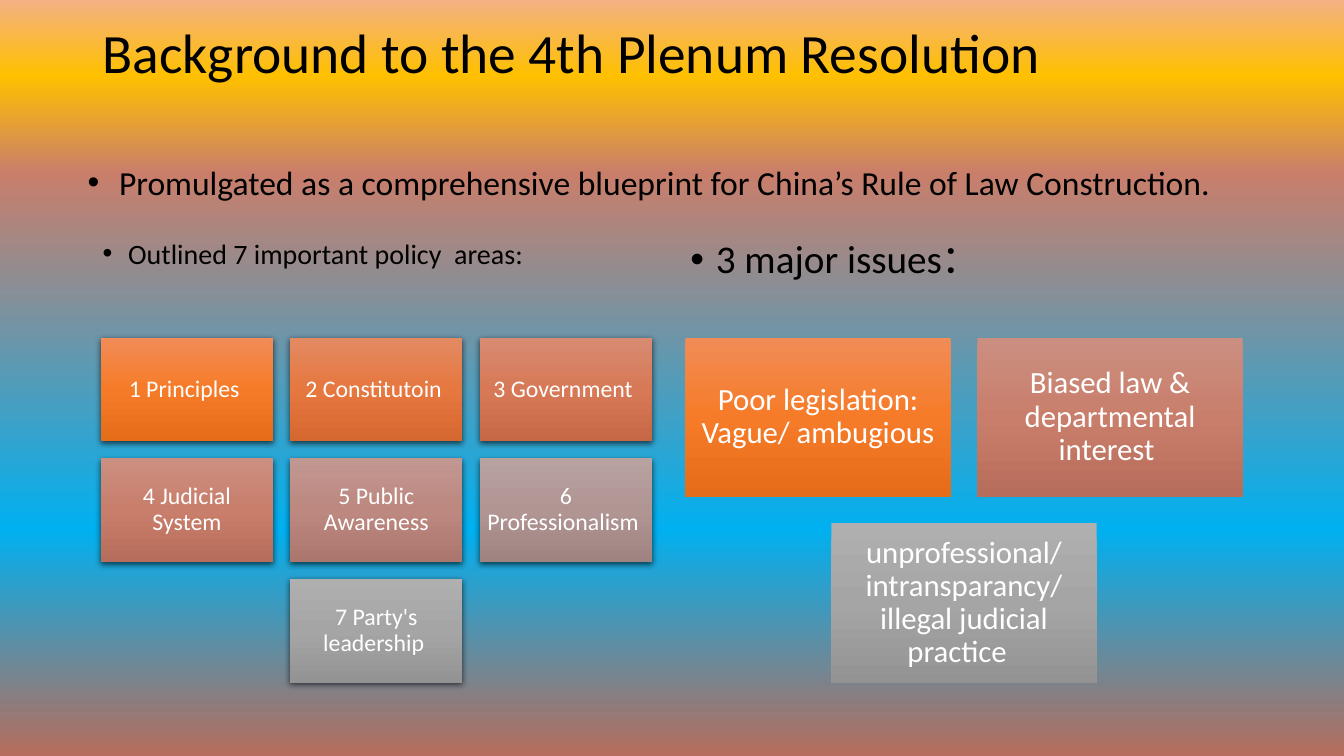
from dataclasses import dataclass

from lxml import etree
from pptx import Presentation
from pptx import util as u
from pptx.dml.color import RGBColor
from pptx.enum import shapes, text
from pptx.oxml import ns


@dataclass(frozen=True)
class Theme:
    font: str = "Calibri"
    dark: str = "000000"
    light: str = "FFFFFF"
    title: float = 39.6
    lead: float = 24
    policy_heading: float = 20
    issue_heading: float = 28
    policy: float = 17
    issue: float = 22
    backdrop: tuple = ((0, "F4B183"), (10, "FFC000"), (23, "C97E6B"),
                       (70, "00B0F0"), (100, "B76D5B"))
    orange: tuple = ((0, "F18C57"), (50, "F67B28"), (100, "E56C19"))
    amber: tuple = ((0, "E38A63"), (50, "E6773F"), (100, "D56730"))
    coral: tuple = ((0, "D78B72"), (50, "D77956"), (100, "C66846"))
    clay: tuple = ((0, "CB8F81"), (50, "C97E6B"), (100, "B76D5B"))
    rose: tuple = ((0, "C19791"), (50, "BC8880"), (100, "AA766E"))
    mauve: tuple = ((0, "B7A2A0"), (50, "B09593"), (100, "9E8381"))
    grey: tuple = ((0, "AFAFAF"), (50, "A5A5A5"), (100, "939393"))


THEME = Theme()

POLICY_AREAS = [
    ("1 Principles ", THEME.orange),
    ("2 Constitutoin ", THEME.amber),
    ("3 Government ", THEME.coral),
    ("4 Judicial System", THEME.clay),
    ("5 Public Awareness", THEME.rose),
    ("6 Professionalism ", THEME.mauve),
    ("7 Party's leadership ", THEME.grey),
]
MAJOR_ISSUES = [
    ("Poor legislation: Vague/ ambugious", THEME.orange),
    ("Biased law & departmental interest ", THEME.clay),
    ("unprofessional/ intransparancy/ illegal judicial practice  ", THEME.grey),
]


def set_attributes(target, values):
    for name, value in values.items():
        setattr(target, name, value)


def add_element(parent, tag, **attributes):
    element = etree.SubElement(parent, ns.qn(tag))
    for name, value in attributes.items():
        element.set(name, str(value))
    return element


def fill_gradient(fill, owner, stops):
    """Fill from top to bottom with any number of colour stops."""
    fill.gradient()
    fill.gradient_angle = 270
    stop_list = next(owner.iter(ns.qn("a:gsLst")))
    for stop in list(stop_list):
        stop_list.remove(stop)
    for percent, color in stops:
        stop = add_element(stop_list, "a:gs", pos=percent * 1000)
        add_element(stop, "a:srgbClr", val=color)


def add_shadow(shape):
    effects = shape._element.spPr.find(ns.qn("a:effectLst"))
    shadow = add_element(effects, "a:outerShdw", blurRad=u.Pt(4.5),
                         dist=u.Pt(1.5), dir=5400000, algn="ctr", rotWithShape=0)
    color = add_element(shadow, "a:srgbClr", val="000000")
    add_element(color, "a:alpha", val=63000)


def write(paragraph, wording, size, color):
    run = paragraph.add_run()
    run.text = wording
    set_attributes(run.font, {"name": THEME.font, "size": u.Pt(size)})
    run.font.color.rgb = RGBColor.from_string(color)


# Title, lead sentence and column headings
def add_text(slide, box, wording, size, indent=None, spacing=0.9,
             anchor=text.MSO_ANCHOR.TOP):
    shape = slide.shapes.add_textbox(*map(u.Cm, box))
    set_attributes(shape.text_frame, {"word_wrap": True, "vertical_anchor": anchor})
    paragraph = shape.text_frame.paragraphs[0]
    if indent:
        properties = paragraph._p.get_or_add_pPr()
        properties.set("marL", str(u.Cm(indent)))
        properties.set("indent", str(-u.Cm(indent)))
        add_element(properties, "a:buFont", typeface="Arial")
        add_element(properties, "a:buChar", char="•")
    paragraph.line_spacing = spacing
    write(paragraph, wording, size, THEME.dark)


# One coloured card
def add_card(slide, box, wording, stops, size, inset, shadowed):
    shape = slide.shapes.add_shape(shapes.MSO_SHAPE.RECTANGLE, *map(u.Cm, box))
    shape.shadow.inherit = False
    fill_gradient(shape.fill, shape._element, stops)
    shape.line.fill.background()
    if shadowed:
        add_shadow(shape)
    margins = {f"margin_{side}": u.Cm(inset)
               for side in ("left", "top", "right", "bottom")}
    set_attributes(shape.text_frame, {
        "word_wrap": True, "vertical_anchor": text.MSO_ANCHOR.MIDDLE, **margins})
    paragraph = shape.text_frame.paragraphs[0]
    set_attributes(paragraph, {"alignment": text.PP_ALIGN.CENTER, "line_spacing": 0.9})
    write(paragraph, wording, size, THEME.light)


# Grid of cards, with an incomplete last row centred
def add_card_grid(slide, box, cards, columns, gap, size, inset, shadowed=False):
    left, top, width, height = box
    rows = -(-len(cards) // columns)
    card_width = (width - gap * (columns - 1)) / columns
    card_height = (height - gap * (rows - 1)) / rows
    for index, (wording, stops) in enumerate(cards):
        row, column = divmod(index, columns)
        in_row = min(columns, len(cards) - row * columns)
        column += (columns - in_row) / 2
        card_box = (left + column * (card_width + gap),
                    top + row * (card_height + gap), card_width, card_height)
        add_card(slide, card_box, wording, stops, size, inset, shadowed)


def add_background_slide(presentation):
    slide = presentation.slides.add_slide(presentation.slide_layouts[6])
    fill_gradient(slide.background.fill, slide.element, THEME.backdrop)

    add_text(slide, (2.34, 0.25, 29.21, 2.29),
             "Background to the 4th Plenum Resolution", THEME.title,
             anchor=text.MSO_ANCHOR.MIDDLE)

    # Left column: policy areas
    add_text(slide, (2.34, 5.92, 14.33, 11.28),
             "Outlined 7 important policy  areas:", THEME.policy_heading, indent=0.64)
    add_card_grid(slide, (2.54, 8.51, 13.89, 8.69), POLICY_AREAS, columns=3,
                  gap=0.43, size=THEME.policy, inset=0.18, shadowed=True)

    # Right column: major issues
    add_text(slide, (17.15, 5.92, 14.4, 11.28),
             "3 major issues：", THEME.issue_heading, indent=0.64)
    add_card_grid(slide, (17.27, 8.51, 14.05, 8.69), MAJOR_ISSUES, columns=2,
                  gap=0.67, size=THEME.issue, inset=0.23)

    # Lead sentence
    add_text(slide, (1.96, 3.96, 29.31, 1.27),
             "Promulgated as a comprehensive blueprint for China’s Rule of Law "
             "Construction.", THEME.lead, indent=0.79, spacing=1.0)


def main():
    presentation = Presentation()
    set_attributes(presentation, {"slide_width": u.Cm(33.87),
                                  "slide_height": u.Cm(19.05)})
    add_background_slide(presentation)
    presentation.save("out.pptx")


if __name__ == "__main__":
    main()
